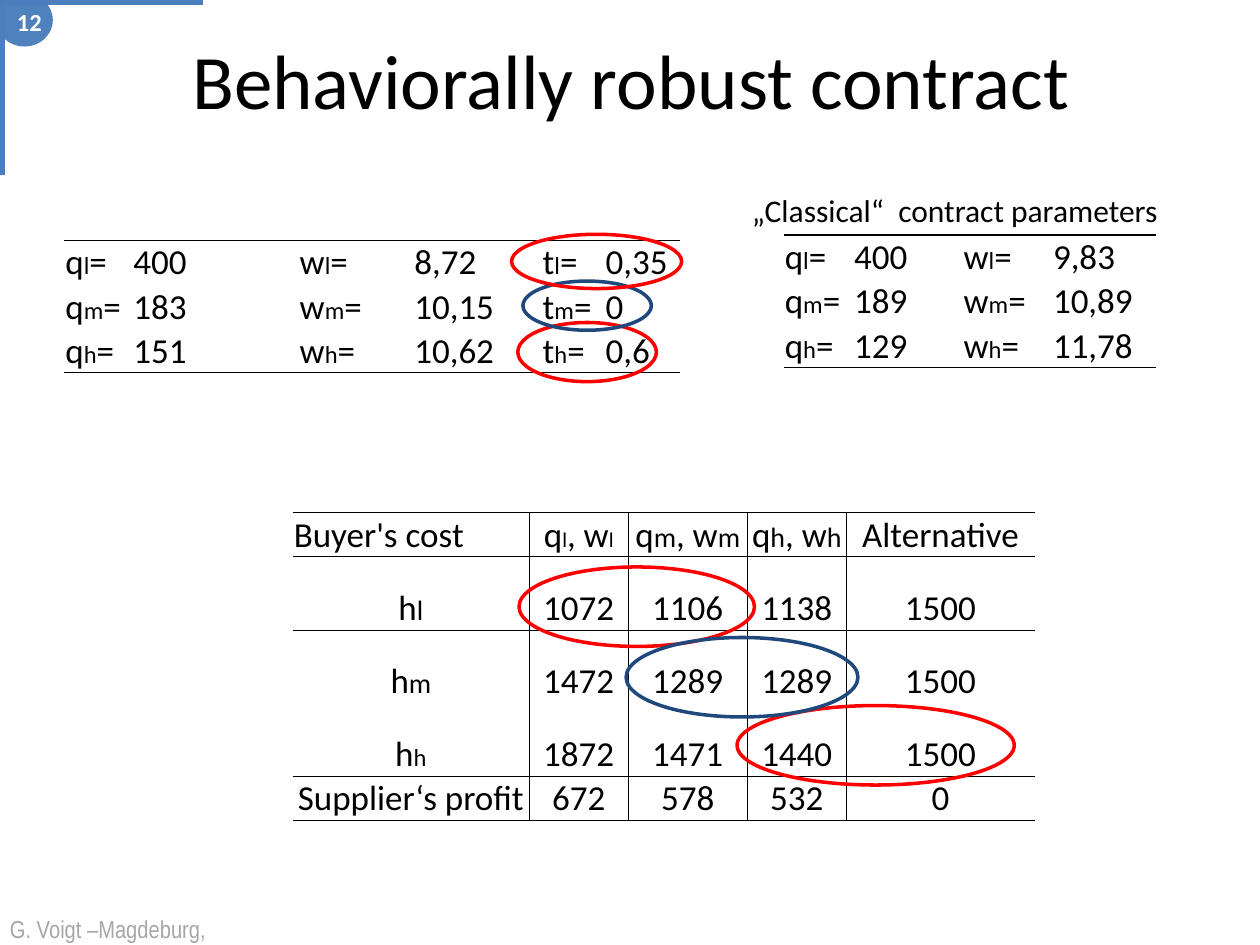
from dataclasses import dataclass

from lxml import etree
from pptx import Presentation
from pptx.dml.color import RGBColor
from pptx.enum.shapes import MSO_CONNECTOR, MSO_SHAPE
from pptx.enum.text import MSO_ANCHOR, PP_ALIGN
from pptx.oxml.ns import qn
from pptx.util import Pt

LEFT, CENTER, RIGHT = PP_ALIGN.LEFT, PP_ALIGN.CENTER, PP_ALIGN.RIGHT
TOP, MIDDLE, BOTTOM = MSO_ANCHOR.TOP, MSO_ANCHOR.MIDDLE, MSO_ANCHOR.BOTTOM
ELLIPSE, STRAIGHT = MSO_SHAPE.OVAL, MSO_CONNECTOR.STRAIGHT


@dataclass(frozen=True)
class Theme:
    font: str = "Calibri"
    footer_font: str = "Arial Narrow"
    ink: str = "000000"
    badge: str = "4F81BD"
    corner: str = "4B7EBC"
    white: str = "FFFFFF"
    grey: str = "A6A6A6"
    red: str = "FF0000"
    navy: str = "1F497D"
    title: float = 44
    body: float = 20
    caption: float = 18
    small: float = 14
    thick: float = 1
    thin: float = 0.5


THEME = Theme()


def color(value):
    return RGBColor.from_string(value)


def write(frame, text, size=THEME.body, font=THEME.font, ink=THEME.ink,
          bold=False, align=LEFT):
    paragraph = frame.paragraphs[0]
    paragraph.alignment = align
    runs = [(text, size)] if isinstance(text, str) else text
    for words, run_size in runs:
        run = paragraph.add_run()
        run.text = words
        run.font.size = Pt(run_size)
        run.font.name = font
        run.font.bold = bold
        run.font.color.rgb = color(ink)


def indexed(letter, index, size=THEME.small, tail=""):
    runs = [(letter, THEME.body), (index, size)]
    return runs + [(tail, THEME.body)] if tail else runs


def offer(index, size):
    return indexed("q", index, size) + indexed(", w", index, size)


def add_text(slide, box, text, anchor=TOP, **style):
    frame = slide.shapes.add_textbox(*map(Pt, box)).text_frame
    frame.word_wrap = True
    frame.vertical_anchor = anchor
    write(frame, text, **style)


def add_ellipse(slide, box, fill=None, outline=None):
    ellipse = slide.shapes.add_shape(ELLIPSE, *map(Pt, box))
    ellipse.shadow.inherit = False
    if fill:
        ellipse.fill.solid()
        ellipse.fill.fore_color.rgb = color(fill)
    else:
        ellipse.fill.background()
    if outline:
        ellipse.line.color.rgb = color(outline)
        ellipse.line.width = Pt(2)
    else:
        ellipse.line.fill.background()


def add_line(slide, ends):
    line = slide.shapes.add_connector(STRAIGHT, *map(Pt, ends))
    line.line.color.rgb = color(THEME.corner)
    line.line.width = Pt(3)
    etree.SubElement(line._element.spPr, qn("a:effectLst"))


def set_borders(cell, **widths):
    properties = cell._tc.get_or_add_tcPr()
    for position, (side, width) in enumerate(widths.items()):
        border = etree.Element(qn(f"a:ln{side}"), w=str(Pt(width)))
        if width:
            fill = etree.SubElement(border, qn("a:solidFill"))
            etree.SubElement(fill, qn("a:srgbClr"), val=THEME.ink)
        else:
            etree.SubElement(border, qn("a:noFill"))
        properties.insert(position, border)


def add_table(slide, left, top, widths, heights, rows, row_rules, column_rules,
              align_at):
    table = slide.shapes.add_table(len(heights), len(widths), Pt(left), Pt(top),
                                   Pt(sum(widths)), Pt(sum(heights))).table
    table.first_row = table.horz_banding = False
    for column, width in zip(table.columns, widths):
        column.width = Pt(width)
    for r, (height, texts) in enumerate(zip(heights, rows)):
        table.rows[r].height = Pt(height)
        for c, text in enumerate(texts):
            cell = table.cell(r, c)
            cell.margin_left = cell.margin_right = cell.margin_top = Pt(0.7)
            cell.margin_bottom = Pt(0)
            cell.vertical_anchor = BOTTOM
            cell.fill.background()
            write(cell.text_frame, text, align=align_at(r, c))
            set_borders(cell, L=column_rules[c], R=column_rules[c + 1],
                        T=row_rules[r], B=row_rules[r + 1])


def add_parameters(slide, left, top, widths, symbols, values):
    rows = []
    for index, row_values in zip("lmh", values):
        rows.append([text for symbol, value in zip(symbols, row_values)
                     for text in (indexed(symbol, index, tail="="), value)])
    add_table(slide, left, top, widths, [25.2] * 3, rows,
              [THEME.thick, 0, 0, THEME.thin], [0] * (len(widths) + 1),
              lambda r, c: LEFT)


def add_costs(slide):
    rows = [
        ["Buyer's cost", offer("l", 12), offer("m", 16), offer("h", 16), "Alternative"],
        [indexed("h", "l", 16), "1072", "1106", "1138", "1500"],
        [indexed("h", "m", 16), "1472", "1289", "1289", "1500"],
        [indexed("h", "h"), "1872", "1471", "1440", "1500"],
        ["Supplier‘s profit", "672", "578", "532", "0"],
    ]
    thick, thin = THEME.thick, THEME.thin
    add_table(slide, 167.2, 293, [135.2, 56.7, 67.9, 56.7, 107.6],
              [25.2, 41.8, 41.8, 41.8, 25.2], rows,
              [thick, thin, thin, 0, thin, thick],
              [0, thin, thin, thin, thick, 0],
              lambda r, c: CENTER if r or c else LEFT)


def main():
    deck = Presentation()
    deck.slide_width, deck.slide_height = Pt(720), Pt(540)
    slide = deck.slides.add_slide(deck.slide_layouts[6])

    add_ellipse(slide, (-2.2, -3.6, 32.4, 30.2), fill=THEME.badge)
    add_text(slide, (-1.4, 519, 604, 24.5), "G. Voigt –Magdeburg,",
             size=THEME.small, font=THEME.footer_font, ink=THEME.grey)
    add_line(slide, (0, 1.4, 116, 1.4))
    add_line(slide, (1.4, 2, 1.4, 100))
    add_costs(slide)
    add_text(slide, (36.7, 0, 648, 90), "Behaviorally robust contract",
             anchor=MIDDLE, size=THEME.title, align=CENTER)
    add_text(slide, (-14.4, -2.2, 45.4, 28.8), "12", anchor=MIDDLE,
             size=THEME.small, ink=THEME.white, bold=True, align=RIGHT)
    add_parameters(slide, 36.7, 137.3, [38.9, 95, 65.5, 73.4, 36, 43.2], "qwt",
                   [("400", "8,72", "0,35"), ("183", "10,15", "0"),
                    ("151", "10,62", "0,6")])

    for outline, box in [
        (THEME.red, (296.6, 324, 134.6, 45.4)),
        (THEME.red, (421.2, 403.2, 158.4, 45.4)),
        (THEME.red, (295.9, 184.3, 79.2, 33.8)),
        (THEME.navy, (298.8, 160.6, 73.4, 28.1)),
        (THEME.navy, (357.8, 364.3, 132.5, 45.4)),
        (THEME.red, (292.3, 133.9, 97.2, 31)),
    ]:
        add_ellipse(slide, box, outline=outline)

    add_parameters(slide, 447.8, 134.4, [39.6, 62.6, 51.1, 59.4], "qw",
                   [("400", "9,83"), ("189", "10,89"), ("129", "11,78")])
    add_text(slide, (422.6, 105.8, 323.3, 28.8),
             "„Classical“  contract parameters", size=THEME.caption)
    deck.save("out.pptx")


if __name__ == "__main__":
    main()
